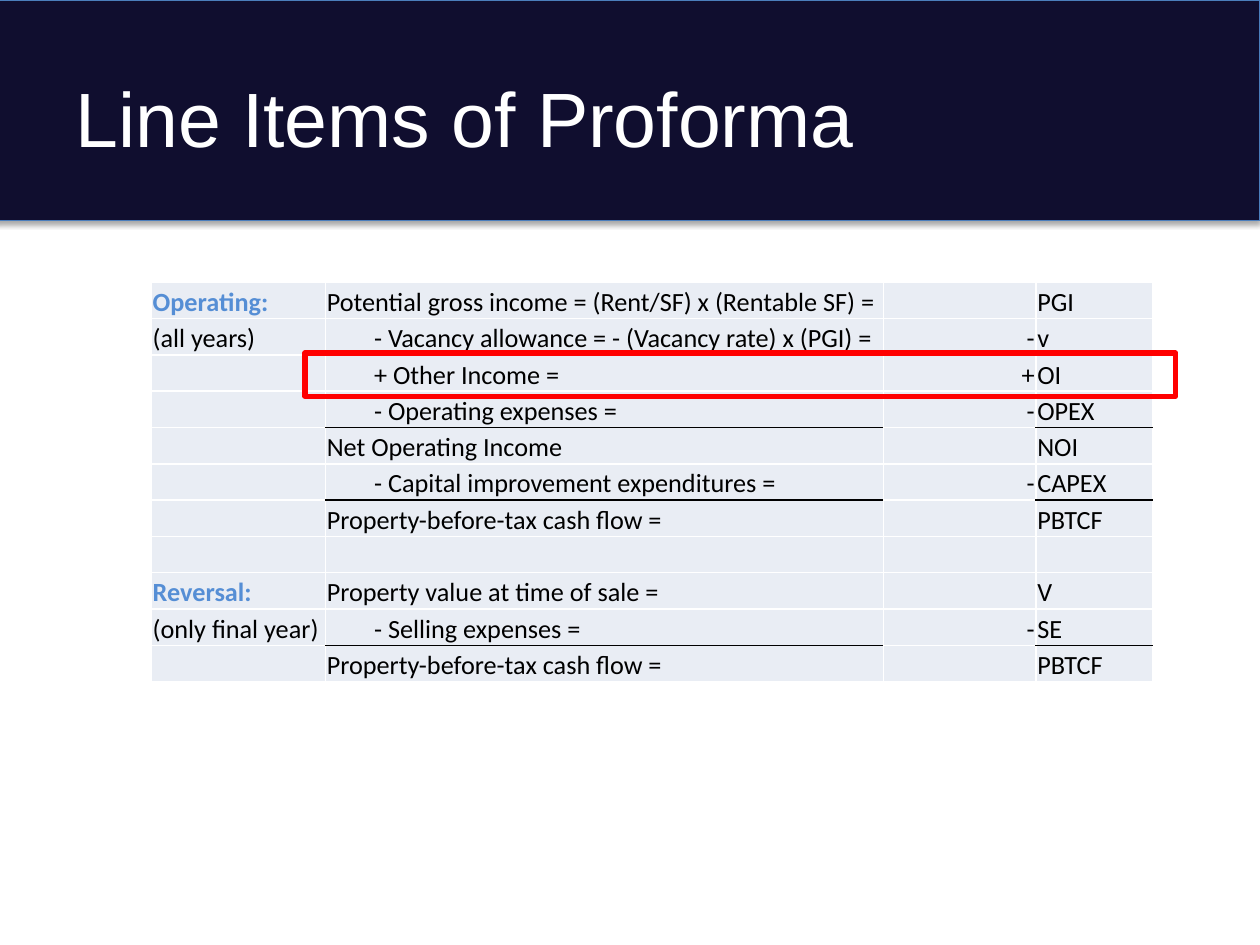
from lxml.etree import SubElement
from pptx import Presentation
from pptx.dml.color import RGBColor
from pptx.enum.shapes import MSO_SHAPE
from pptx.enum.text import MSO_ANCHOR, PP_ALIGN
from pptx.oxml.ns import qn
from pptx.util import Pt

INK, PAPER, HEADING, CELL = "000000", "FFFFFF", "558ED5", "E9EDF4"
COLUMN_WIDTHS = [99.5, 319, 87, 66.5]
ROW_HEIGHT = 20.75
INDENT = 27
HEADINGS = {"Operating:", "Reversal:"}
ROWS = [
    ("Operating:", "Potential gross income = (Rent/SF) x (Rentable SF) =", "", "PGI"),
    ("(all years)", "- Vacancy allowance = - (Vacancy rate) x (PGI) =", "-", "v"),
    ("", "+ Other Income =", "+", "OI"),
    ("", "- Operating expenses =", "-", "OPEX"),
    ("", "Net Operating Income", "", "NOI"),
    ("", "- Capital improvement expenditures =", "-", "CAPEX"),
    ("", "Property-before-tax cash flow =", "", "PBTCF"),
    ("", "", "", ""),
    ("Reversal:", "Property value at time of sale =", "", "V"),
    ("(only final year)", "- Selling expenses =", "-", "SE"),
    ("", "Property-before-tax cash flow =", "", "PBTCF"),
]
TOTAL_ROWS = {4, 6, 10}
RULED_COLUMNS = {1, 3}


def rgb(value):
    """Turn a hex string into a colour."""
    return RGBColor.from_string(value)


def write(tf, text, font="Calibri", size=15, color=INK, bold=False,
          align=PP_ALIGN.LEFT, indent=0):
    """Write one formatted paragraph into a text frame."""
    p = tf.paragraphs[0]
    p.alignment = align
    if indent:
        p._p.get_or_add_pPr().set("marL", str(Pt(indent)))
    if not text:
        SubElement(p._p, qn("a:endParaRPr"), sz=str(size * 100))
        return
    r = p.add_run()
    r.text = text
    r.font.name, r.font.size, r.font.bold = font, Pt(size), bold
    r.font.color.rgb = rgb(color)


def add_rect(s, left, top, width, height, line, weight, fill=None):
    """Add a rectangle with an outline and an optional fill."""
    sp = s.shapes.add_shape(MSO_SHAPE.RECTANGLE, Pt(left), Pt(top), Pt(width), Pt(height))
    sp.shadow.inherit = False
    sp.line.color.rgb = rgb(line)
    sp.line.width = Pt(weight)
    if fill:
        sp.fill.solid()
        sp.fill.fore_color.rgb = rgb(fill)
    else:
        sp.fill.background()
    return sp


def add_shadow(sp, blur, distance, opacity):
    """Give a shape a soft black shadow that falls straight down."""
    effects = sp._element.spPr.find(qn("a:effectLst"))
    shadow = SubElement(effects, qn("a:outerShdw"), blurRad=str(Pt(blur)),
                        dist=str(Pt(distance)), dir="5400000", rotWithShape="0")
    color = SubElement(shadow, qn("a:srgbClr"), val=INK)
    SubElement(color, qn("a:alpha"), val=str(opacity * 1000))


def add_title(s, text):
    """Add the slide title, centred vertically in its box."""
    tf = s.shapes.add_textbox(Pt(36), Pt(21.6), Pt(648), Pt(90)).text_frame
    tf.word_wrap = True
    tf.vertical_anchor = MSO_ANCHOR.MIDDLE
    write(tf, text, font="Arial", size=44, color=PAPER)


def set_borders(cell, top, bottom):
    """Draw one-point borders round a cell, white at the sides."""
    tc_pr = cell._tc.get_or_add_tcPr()
    for side, color in zip("LRTB", (PAPER, PAPER, top, bottom)):
        ln = SubElement(tc_pr, qn(f"a:ln{side}"), w=str(Pt(1)))
        SubElement(SubElement(ln, qn("a:solidFill")), qn("a:srgbClr"), val=color)


def fill_cell(cell, row, col, text):
    """Format one proforma cell by its place and wording."""
    ruled = col in RULED_COLUMNS
    set_borders(cell, INK if ruled and row in TOTAL_ROWS else PAPER,
                INK if ruled and row + 1 in TOTAL_ROWS else PAPER)
    cell.fill.solid()
    cell.fill.fore_color.rgb = rgb(CELL)
    cell.margin_left = cell.margin_right = cell.margin_top = Pt(0.75)
    cell.margin_bottom = 0
    cell.vertical_anchor = MSO_ANCHOR.BOTTOM
    heading = text in HEADINGS
    write(cell.text_frame, text, color=HEADING if heading else INK, bold=heading,
          align=PP_ALIGN.RIGHT if col == 2 else PP_ALIGN.LEFT,
          indent=INDENT if col == 1 and text.startswith(("-", "+")) else 0)


def add_proforma(s, left, top):
    """Add the table of proforma line items."""
    table = s.shapes.add_table(len(ROWS), len(COLUMN_WIDTHS), Pt(left), Pt(top),
                               Pt(sum(COLUMN_WIDTHS)), Pt(ROW_HEIGHT * len(ROWS))).table
    table.first_row = table.horz_banding = False
    for column, width in zip(table.columns, COLUMN_WIDTHS):
        column.width = Pt(width)
    for i, texts in enumerate(ROWS):
        table.rows[i].height = Pt(ROW_HEIGHT)
        for j, text in enumerate(texts):
            fill_cell(table.cell(i, j), i, j, text)


def main():
    """Build and save the slide."""
    prs = Presentation()
    prs.slide_width, prs.slide_height = Pt(720), Pt(540)
    s = prs.slides.add_slide(prs.slide_layouts[6])
    band = add_rect(s, -3, 0, 723, 126, "4B7EBC", 0.75, fill="100E2F")
    add_shadow(band, 3.1, 1.8, 35)
    add_title(s, "Line Items of Proforma")
    add_proforma(s, 86.5, 161.3)
    add_rect(s, 174.3, 201.7, 497.5, 24.7, "FF0000", 3)
    prs.save("out.pptx")


if __name__ == "__main__":
    main()
